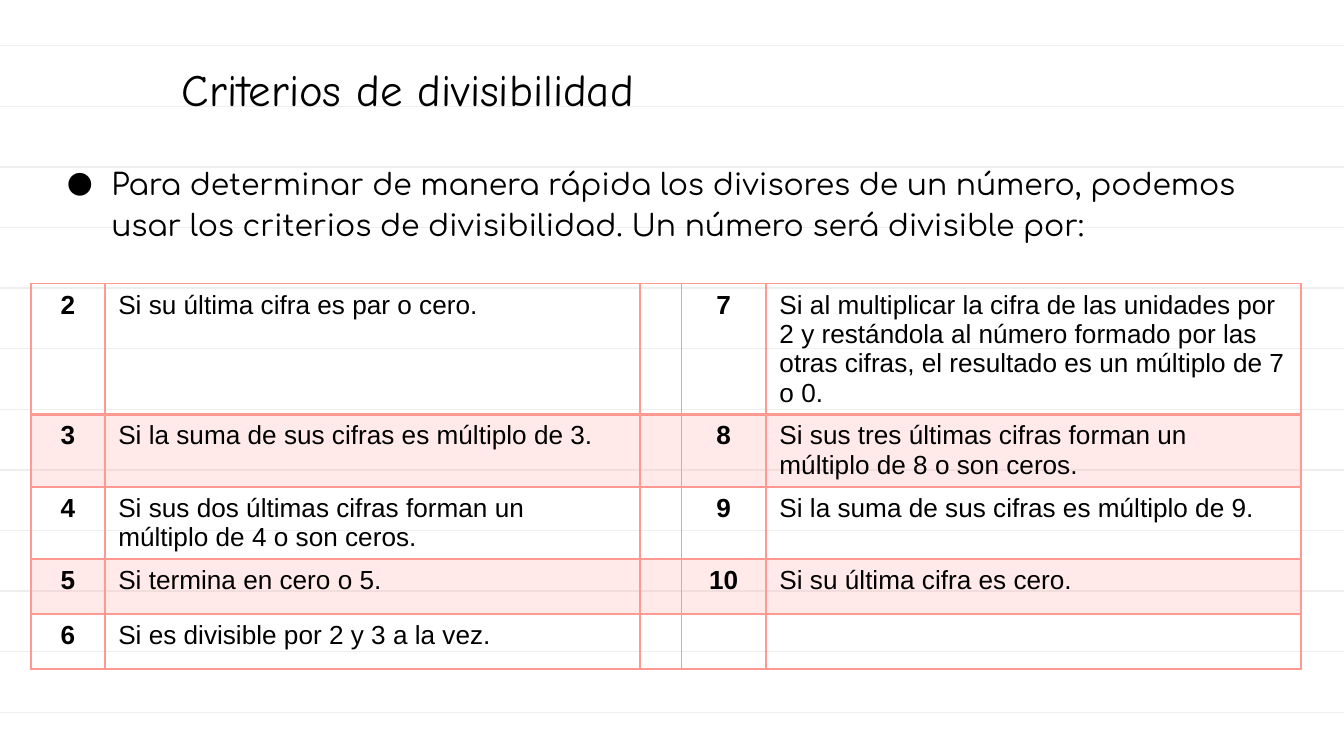
from dataclasses import dataclass

from lxml import etree
from pptx import Presentation
from pptx.dml.color import RGBColor
from pptx.enum.shapes import MSO_CONNECTOR
from pptx.enum.text import MSO_ANCHOR, MSO_AUTO_SIZE, PP_ALIGN
from pptx.oxml.ns import qn
from pptx.util import Inches, Pt

STRAIGHT = MSO_CONNECTOR.STRAIGHT
BOTTOM = MSO_ANCHOR.BOTTOM
NO_AUTOFIT = MSO_AUTO_SIZE.NONE
CENTER, LEFT = PP_ALIGN.CENTER, PP_ALIGN.LEFT
TITLE_ONLY = 5


@dataclass(frozen=True)
class Theme:
    text: str = "000000"
    rule: str = "EEEEEE"
    accent: str = "FF9991"
    band_opacity: int = 20
    title_font: str = "Comic Neue"
    body_font: str = "Comfortaa"
    table_font: str = "Arial"
    title_size: int = 24
    body_size: int = 16
    table_size: int = 14


THEME = Theme()
SLIDE_WIDTH = 10
SLIDE_HEIGHT = SLIDE_WIDTH * 9 / 16
RULE_COUNT, FIRST_RULE, LAST_RULE = 12, 0.34, 5.3
COLUMN_WIDTHS = (0.55, 3.98, 0.31, 0.63, 3.98)
ROW_HEIGHT = 0.41
NUMBER_COLUMNS = (0, 3)

INTRODUCTION = (
    "Para determinar de manera rápida los divisores de un número, podemos "
    "usar los criterios de divisibilidad. Un número será divisible por:"
)
CRITERIA = (
    ("2", "Si su última cifra es par o cero.", "", "7",
     "Si al multiplicar la cifra de las unidades por 2 y restándola al número "
     "formado por las otras cifras, el resultado es un múltiplo de 7 o 0."),
    ("3", "Si la suma de sus cifras es múltiplo de 3.", "", "8",
     "Si sus tres últimas cifras forman un\nmúltiplo de 8 o son ceros."),
    ("4", "Si sus dos últimas cifras forman un\nmúltiplo de 4 o son ceros.", "", "9",
     "Si la suma de sus cifras es múltiplo de 9."),
    ("5", "Si termina en cero o 5.", "", "10", "Si su última cifra es cero."),
    ("6", "Si es divisible por 2 y 3 a la vez.", "", "", ""),
)


def style_paragraph(paragraph, font_name, size, alignment=LEFT, bold=False):
    paragraph.alignment = alignment
    font = paragraph.font
    font.name, font.size, font.bold = font_name, Pt(size), bold
    font.color.rgb = RGBColor.from_string(THEME.text)


def set_frame(text_frame):
    text_frame.word_wrap = True
    text_frame.auto_size = NO_AUTOFIT
    text_frame.margin_left = text_frame.margin_right = Inches(0.1)
    text_frame.margin_top = text_frame.margin_bottom = Inches(0.1)


def add_ruled_paper(slide):
    step = (LAST_RULE - FIRST_RULE) / (RULE_COUNT - 1)
    for index in range(RULE_COUNT):
        y = Inches(FIRST_RULE + index * step)
        rule = slide.shapes.add_connector(STRAIGHT, 0, y, Inches(SLIDE_WIDTH), y)
        rule.line.color.rgb = RGBColor.from_string(THEME.rule)
        rule.line.width = Pt(0.75)
        etree.SubElement(rule.element.spPr, qn("a:effectLst"))


def set_title(slide, text):
    """Fill the title and bring it in front of the ruled paper."""
    title = slide.shapes.title
    title.element.getparent().append(title.element)
    title.left, title.top = Inches(0.23), Inches(0.16)
    title.width, title.height = Inches(5.61), Inches(0.8)
    frame = title.text_frame
    set_frame(frame)
    frame.vertical_anchor = BOTTOM
    frame.text = text
    style_paragraph(frame.paragraphs[0], THEME.title_font, THEME.title_size, CENTER)


def add_bullet(paragraph, character):
    properties = paragraph._p.get_or_add_pPr()
    properties.set("marL", str(Inches(0.5)))
    properties.set("indent", str(Inches(-0.33)))
    color = etree.SubElement(properties, qn("a:buClr"))
    etree.SubElement(color, qn("a:srgbClr"), val=THEME.text)
    etree.SubElement(properties, qn("a:buSzPts"), val=str(THEME.body_size * 100))
    etree.SubElement(properties, qn("a:buFont"), typeface=THEME.body_font)
    etree.SubElement(properties, qn("a:buChar"), char=character)


def add_introduction(slide, text):
    box = slide.shapes.add_textbox(Inches(0.23), Inches(1.09), Inches(9.53), Inches(3.41))
    set_frame(box.text_frame)
    paragraph = box.text_frame.paragraphs[0]
    paragraph.text = text
    add_bullet(paragraph, "●")
    paragraph.line_spacing = 1.15
    style_paragraph(paragraph, THEME.body_font, THEME.body_size)


def set_cell_borders(cell, bottom_width):
    properties = cell._tc.get_or_add_tcPr()
    widths = {"a:lnL": 1, "a:lnR": 1, "a:lnT": 1, "a:lnB": bottom_width}
    for position, (tag, width) in enumerate(widths.items()):
        line = etree.Element(qn(tag), w=str(Pt(width)))
        fill = etree.SubElement(line, qn("a:solidFill"))
        etree.SubElement(fill, qn("a:srgbClr"), val=THEME.accent)
        properties.insert(position, line)


def set_cell_fill(cell, banded):
    if not banded:
        cell.fill.background()
        return
    cell.fill.solid()
    cell.fill.fore_color.rgb = RGBColor.from_string(THEME.accent)
    color = cell._tc.tcPr.find(".//" + qn("a:srgbClr"))
    etree.SubElement(color, qn("a:alpha"), val=str(THEME.band_opacity * 1000))


def add_criteria_table(slide):
    frame = slide.shapes.add_table(
        len(CRITERIA), len(COLUMN_WIDTHS), Inches(0.23), Inches(2.11),
        Inches(sum(COLUMN_WIDTHS)), Inches(ROW_HEIGHT * len(CRITERIA)))
    table = frame.table
    table.first_row = table.horz_banding = False
    for column, width in zip(table.columns, COLUMN_WIDTHS):
        column.width = Inches(width)
    for row_index, texts in enumerate(CRITERIA):
        table.rows[row_index].height = Inches(ROW_HEIGHT)
        for column_index, text in enumerate(texts):
            cell = table.cell(row_index, column_index)
            cell.text = text
            is_number = column_index in NUMBER_COLUMNS
            for paragraph in cell.text_frame.paragraphs:
                style_paragraph(paragraph, THEME.table_font, THEME.table_size,
                                CENTER if is_number else LEFT, is_number)
            set_cell_fill(cell, banded=row_index % 2 == 1)
            set_cell_borders(cell, bottom_width=2 if row_index == 0 else 1)


def main():
    presentation = Presentation()
    presentation.slide_width = Inches(SLIDE_WIDTH)
    presentation.slide_height = Inches(SLIDE_HEIGHT)
    slide = presentation.slides.add_slide(presentation.slide_layouts[TITLE_ONLY])
    add_ruled_paper(slide)
    set_title(slide, "Criterios de divisibilidad")
    add_introduction(slide, INTRODUCTION)
    add_criteria_table(slide)
    presentation.save("out.pptx")


if __name__ == "__main__":
    main()
